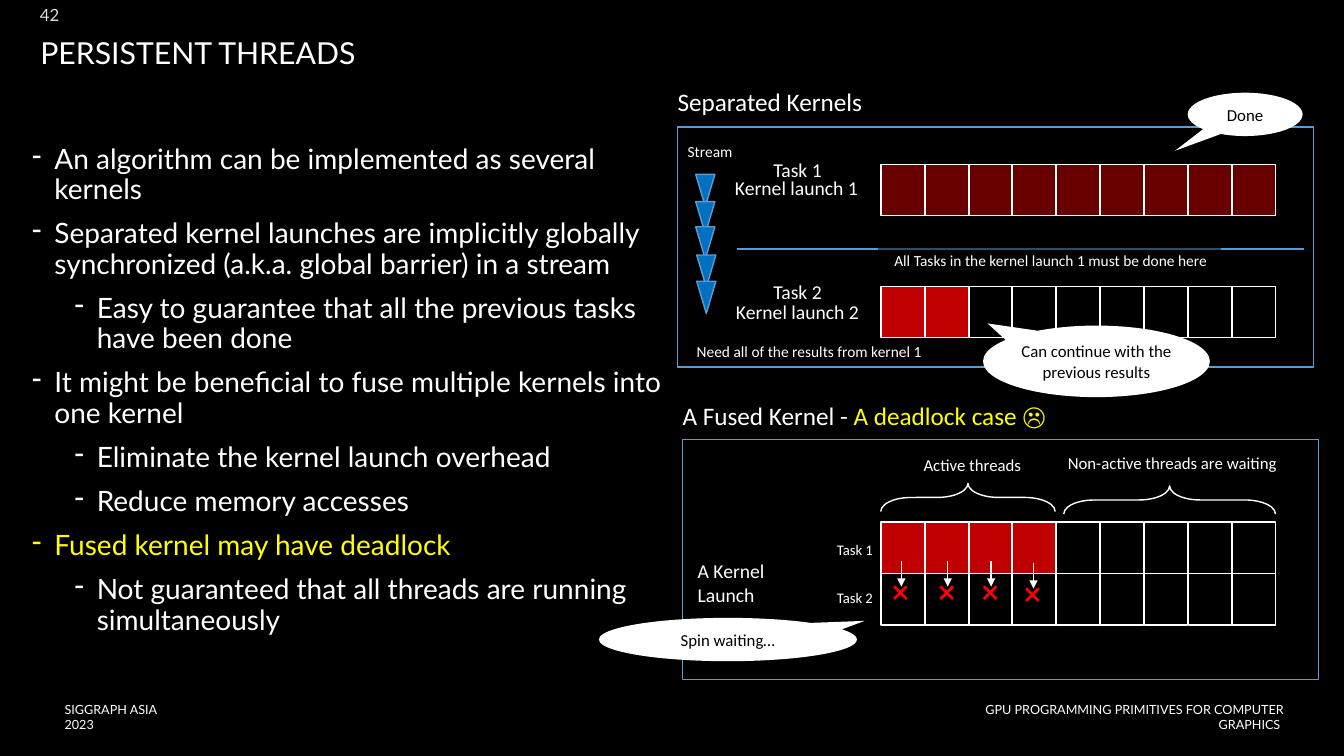
import pptx
import pptx.util
import pptx.dml.color
import pptx.enum.shapes
import pptx.enum.text
import pptx.oxml
import pptx.oxml.ns
from lxml import etree

Inches, Pt = pptx.util.Inches, pptx.util.Pt
SHAPE = pptx.enum.shapes.MSO_SHAPE
ALIGN = pptx.enum.text.PP_ALIGN
ANCHOR = pptx.enum.text.MSO_ANCHOR

THEME = {
    "white": "FFFFFF", "black": "000000", "yellow": "FFFF00", "number": "DDDDDD",
    "done": "680000", "active": "C00000", "cross": "FF0000",
    "stream": "0070C0", "outline": "5B9BD5",
    "heading_font": "Lato", "diagram_font": "Calibri",
    "title": 21.6, "body": 20, "panel": 18, "launch": 14, "label": 12,
    "note": 11, "task": 10.5, "footer": 9,
}

# Content: (level, text, colour)
BULLETS = [
    (0, "An algorithm can be implemented as several kernels", "white"),
    (0, "Separated kernel launches are implicitly globally synchronized "
        "(a.k.a. global barrier) in a stream", "white"),
    (1, "Easy to guarantee that all the previous tasks have been done", "white"),
    (0, "It might be beneficial to fuse multiple kernels into one kernel", "white"),
    (1, "Eliminate the kernel launch overhead", "white"),
    (1, "Reduce memory accesses", "white"),
    (0, "Fused kernel may have deadlock", "yellow"),
    (1, "Not guaranteed that all threads are running simultaneously", "white"),
]
# (box, text, size) per panel
SEPARATED_LABELS = [
    ((7.24, 1.7, 1.37, 0.34), "Kernel launch 1", "launch"),
    ((7.25, 2.93, 1.37, 0.34), "Kernel launch 2", "launch"),
    ((8.82, 2.44, 3.33, 0.29), "All Tasks in the kernel launch 1 must be done here", "note"),
    ((6.67, 0.81, 2.96, 0.4), "Separated Kernels", "panel"),
    ((6.77, 1.36, 0.58, 0.29), "Stream", "note"),
]
FUSED_LABELS = [
    ((9.11, 4.46, 1.81, 0.3), "Active threads", "label"),
    ((10.54, 4.44, 2.31, 0.3), "Non-active threads are waiting", "label"),
    ((6.87, 5.5, 1.37, 0.34), "A Kernel Launch", "launch"),
    ((8.25, 5.32, 0.52, 0.29), "Task 1", "task"),
    ((8.25, 5.79, 0.52, 0.29), "Task 2", "task"),
]
LOOSE_LABELS = [
    ((6.86, 3.34, 2.54, 0.29), "Need all of the results from kernel 1", "note"),
    ((7.62, 1.52, 0.75, 0.34), "Task 1", "launch"),
    ((7.62, 2.73, 0.75, 0.34), "Task 2", "launch"),
]
FUSED_HEADING = [("A Fused Kernel - ", "white"), ("A deadlock case ☹", "yellow")]
# (top, number of coloured cells, colour)
SEPARATED_ROWS = [(1.63, 9, "done"), (2.84, 2, "active")]
FUSED_ROWS = [(5.18, 4, "active"), (5.69, 0, "active")]
THREADS, CELL_LEFT, CELL_PITCH, CELL_SIZE = 9, 8.74, 0.435, (0.43, 0.51)
STREAM_MARKS = [(6.9, 1.73), (6.9, 2), (6.9, 2.25), (6.91, 2.53), (6.91, 2.79)]
WAITS = [(8.94, 5.57), (9.4, 5.57), (9.83, 5.57), (10.25, 5.59)]
BRACES = [(9.46, 4.07, 0.28, 1.73), (11.46, 3.91, 0.28, 2.1)]
# (box, pointer, text)
CALLOUTS = [
    ((9.75, 3.23, 2.25, 0.71), (-0.48, -0.53), "Can continue with the previous results"),
    ((11.78, 0.92, 1.14, 0.43), (-0.61, 0.84), "Done"),
    ((5.94, 6.13, 2.56, 0.43), (0.53, -0.43), "Spin waiting…"),
]


def colour(name):
    return pptx.dml.color.RGBColor.from_string(THEME[name])


def assign(target, values):
    for name, value in values.items():
        setattr(target, name, value)


def add_xml(parent, tag, **attributes):
    return etree.SubElement(parent, pptx.oxml.ns.qn(tag), attributes)


def write(paragraph, runs, size, font="diagram_font"):
    for text, run_colour in runs:
        run = paragraph.add_run()
        run.text = text
        assign(run.font, {"size": Pt(THEME[size]), "name": THEME[font]})
        run.font.color.rgb = colour(run_colour)


def set_frame(frame, anchor=ANCHOR.TOP, inset=0.05, wrap=True):
    margins = dict.fromkeys(
        ("margin_left", "margin_top", "margin_right", "margin_bottom"), Inches(inset))
    assign(frame, {"word_wrap": wrap, "vertical_anchor": anchor, **margins})


def add_label(shapes, box, runs, size, font="diagram_font", align=ALIGN.LEFT,
              spacing=None, **frame_format):
    frame = shapes.add_textbox(*map(Inches, box)).text_frame
    set_frame(frame, **frame_format)
    assign(frame.paragraphs[0], {"alignment": align, "line_spacing": spacing})
    write(frame.paragraphs[0], runs, size, font)


def add_labels(shapes, labels):
    for box, text, size in labels:
        add_label(shapes, box, [(text, "white")], size)


def add_figure(shapes, kind, box, fill=None, line=None, rotation=0, adjust=()):
    figure = shapes.add_shape(kind, *map(Inches, box))
    assign(figure, {"rotation": rotation})
    figure.shadow.inherit = False
    for index, value in enumerate(adjust):
        figure.adjustments[index] = value
    if fill:
        figure.fill.solid()
        figure.fill.fore_color.rgb = colour(fill)
    else:
        figure.fill.background()
    if line:
        figure.line.color.rgb = colour(line)
        figure.line.width = Pt(1)
    else:
        figure.line.fill.background()
    return figure


def add_line(shapes, start, end, line, arrow=False):
    connector = shapes.add_connector(
        pptx.enum.shapes.MSO_CONNECTOR.STRAIGHT, *map(Inches, start + end))
    connector.line.color.rgb = colour(line)
    connector.line.width = Pt(1)
    if arrow:
        add_xml(connector.line._get_or_add_ln(), "a:tailEnd", type="triangle")
    add_xml(connector._element.spPr, "a:effectLst")


def add_rows(shapes, rows):
    for top, filled, fill in rows:
        for thread in range(THREADS):
            add_figure(shapes, SHAPE.RECTANGLE,
                       (CELL_LEFT + thread * CELL_PITCH, top, *CELL_SIZE),
                       fill if thread < filled else "black", "white")


def add_callout(shapes, box, pointer, text):
    callout = add_figure(shapes, SHAPE.OVAL_CALLOUT, box, "white", adjust=pointer)
    set_frame(callout.text_frame, ANCHOR.MIDDLE)
    callout.text_frame.paragraphs[0].alignment = ALIGN.CENTER
    write(callout.text_frame.paragraphs[0], [(text, "black")], "label")


def add_bullets(shapes):
    frame = shapes.add_textbox(*map(Inches, (0.27, 1.39, 6.37, 5.09))).text_frame
    set_frame(frame)
    for index, (level, text, text_colour) in enumerate(BULLETS):
        paragraph = frame.add_paragraph() if index else frame.paragraphs[0]
        properties = paragraph._p.get_or_add_pPr()
        properties.set("marL", str(Inches(0.22 + 0.42 * level)))
        properties.set("indent", str(Inches(-0.22)))
        add_xml(properties, "a:buChar", char="-")
        assign(paragraph, {"level": level, "line_spacing": 0.9,
                           "space_before": Pt(10 if index else 0)})
        write(paragraph, [(text, text_colour)], "body", "heading_font")


def add_separated_kernels(shapes):
    add_rows(shapes, SEPARATED_ROWS)
    add_line(shapes, (7.31, 2.47), (12.93, 2.47), "outline")
    veil = add_figure(shapes, SHAPE.RECTANGLE, (8.71, 2.32, 3.4, 0.24), "black")
    shade = veil._element.spPr.find(".//" + pptx.oxml.ns.qn("a:srgbClr"))
    add_xml(shade, "a:alpha", val="50000")
    add_labels(shapes, SEPARATED_LABELS)
    add_figure(shapes, SHAPE.RECTANGLE, (6.72, 1.26, 6.31, 2.38), line="outline")
    for left, top in STREAM_MARKS:
        add_figure(shapes, SHAPE.ISOSCELES_TRIANGLE, (left, top, 0.19, 0.32),
                   "stream", "outline", rotation=180)


def add_fused_kernel(shapes):
    for box in BRACES:
        add_figure(shapes, SHAPE.LEFT_BRACE, box, line="white", rotation=90,
                   adjust=(1.08, 0.5))
    add_rows(shapes, FUSED_ROWS)
    add_label(shapes, (6.72, 3.92, 4.2, 0.4), FUSED_HEADING, "panel")
    add_figure(shapes, SHAPE.RECTANGLE, (6.77, 4.36, 6.31, 2.38), line="outline")
    for x, y in WAITS:
        add_line(shapes, (x, y), (x, y + 0.25), "white", arrow=True)
        add_figure(shapes, SHAPE.MATH_MULTIPLY, (x - 0.13, y + 0.19, 0.24, 0.24),
                   "cross", adjust=(0.11,))
    add_labels(shapes, FUSED_LABELS)


def main():
    deck = pptx.Presentation()
    assign(deck, {"slide_width": Inches(13.33), "slide_height": Inches(7.5)})
    slide = deck.slides.add_slide(deck.slide_layouts[6])
    slide.background.fill.solid()
    slide.background.fill.fore_color.rgb = colour("black")
    shapes = slide.shapes

    edge = {"font": "heading_font", "anchor": ANCHOR.MIDDLE}
    add_label(shapes, (0.64, 7.04, 1.08, 0.15), [("SIGGRAPH ASIA 2023", "white")],
              "footer", inset=0, **edge)
    add_label(shapes, (9.57, 7.04, 3.16, 0.15),
              [("GPU PROGRAMMING PRIMITIVES FOR COMPUTER GRAPHICS ", "white")],
              "footer", align=ALIGN.RIGHT, inset=0, **edge)
    add_label(shapes, (0.39, 0.05, 0.2, 0.2), [("42", "number")], "label",
              align=ALIGN.RIGHT, inset=0, wrap=False, **edge)
    add_label(shapes, (0.35, 0.33, 12.7, 0.42), [("PERSISTENT THREADS", "white")],
              "title", spacing=0.9, **edge)
    add_bullets(shapes)
    add_separated_kernels(shapes.add_group_shape().shapes)
    add_fused_kernel(shapes.add_group_shape().shapes)
    for callout in CALLOUTS:
        add_callout(shapes, *callout)
    add_labels(shapes, LOOSE_LABELS)
    deck.save("out.pptx")


if __name__ == "__main__":
    main()
